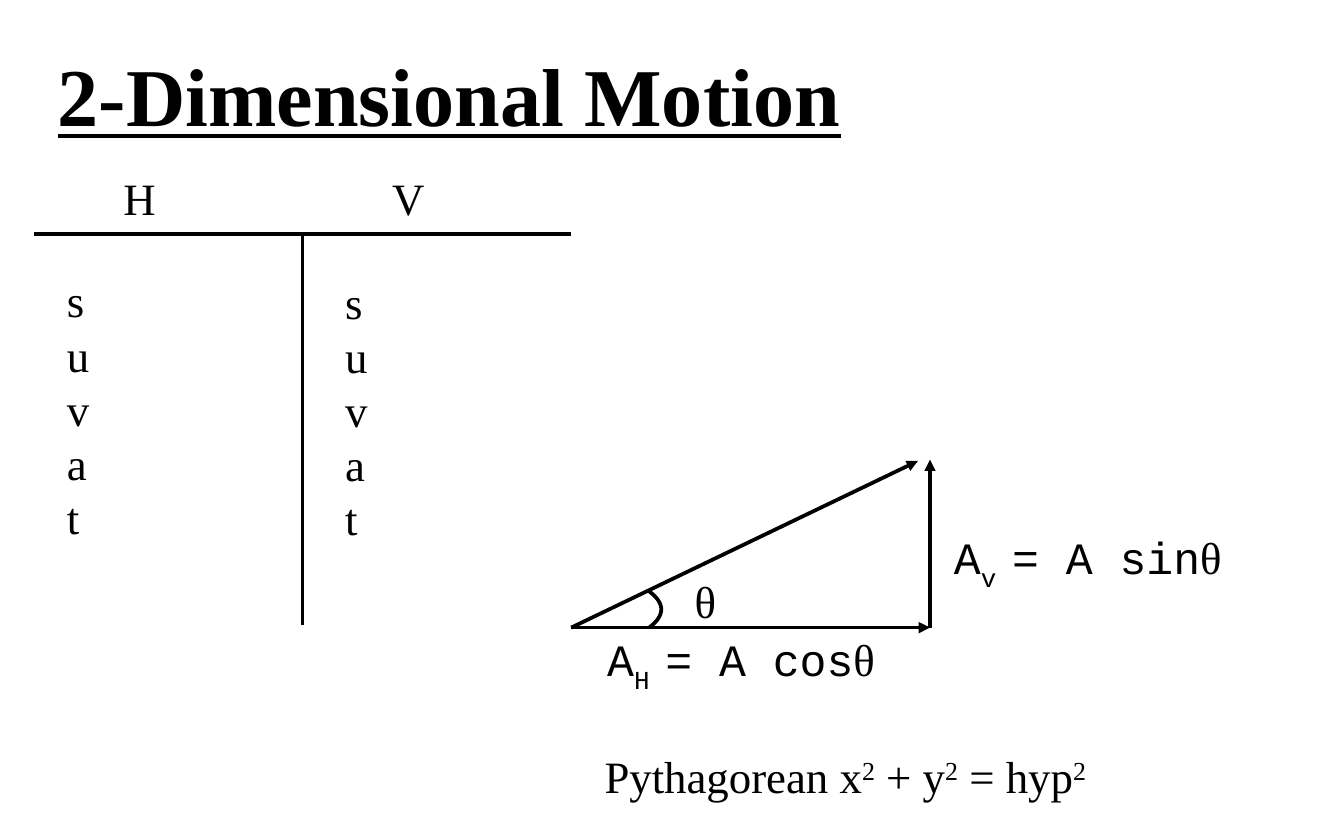
"""Build the 2-Dimensional Motion slide with its H/V table and vector triangle."""
from dataclasses import dataclass

from lxml import etree
from pptx import Presentation
from pptx import util as u
from pptx.dml.color import RGBColor
from pptx.enum import shapes, text
from pptx.oxml import ns

SCALE = 9144


@dataclass(frozen=True)
class Theme:
    ink: RGBColor = RGBColor(0, 0, 0)
    serif: str = "Times New Roman"
    mono: str = "Courier New"
    title_size: int = 44
    title_leading: int = 53
    body_size: int = 24
    body_leading: int = 29
    line_width: int = 2


THEME = Theme()
SERIF, MONO = THEME.serif, THEME.mono
SUB, SUP = -30000, 30000

TITLE = "2-Dimensional Motion"
TITLE_AREA = (33, 28, 908, 138)

COLUMNS = [("H", 82, 40, 198), ("V", 282, 247, 199)]
VARIABLES = ["s", "u", "v", "a", "t"]
TABLE_LINES = [((25, 174), (425, 174)), ((225, 174), (225, 465))]

ORIGIN, CORNER = (425, 467), (692, 467)
VECTORS = [(ORIGIN, (683, 343)), (ORIGIN, CORNER), (CORNER, (692, 342))]
ANGLE_CURVE = [(483, 440), (495, 449), (495, 458), (483, 467)]
CURVE_STEPS = 24

EQUATIONS = [
    ((507, 422, 38, 50), [("θ", SERIF, 0)]),
    ((442, 472, 226, 50),
     [("A", MONO, 0), ("H ", MONO, SUB), ("= A cos", MONO, 0), ("θ", SERIF, 0)]),
    ((700, 396, 226, 50),
     [("A", MONO, 0), ("v ", MONO, SUB), ("= A sin", MONO, 0), ("θ", SERIF, 0)]),
    ((440, 552, 386, 50),
     [("Pythagorean x", SERIF, 0), ("2", SERIF, SUP), (" + y", SERIF, 0),
      ("2", SERIF, SUP), (" = hyp", SERIF, 0), ("2", SERIF, SUP)]),
]


def emu(*lengths):
    return [u.Emu(round(length * SCALE)) for length in lengths]


def style_span(span, face, size, shift=0):
    span.font.name = face
    span.font.size = u.Pt(size)
    span.font.color.rgb = THEME.ink
    if shift:
        span.font._element.set("baseline", str(shift))


def add_title(page):
    box = page.shapes.title
    box.left, box.top, box.width, box.height = emu(*TITLE_AREA)
    frame = box.text_frame
    frame.text = TITLE
    frame.vertical_anchor = text.MSO_ANCHOR.TOP
    frame.auto_size = text.MSO_AUTO_SIZE.NONE
    para = frame.paragraphs[0]
    para.alignment = text.PP_ALIGN.LEFT
    para.line_spacing = u.Pt(THEME.title_leading)
    span = para.runs[0]
    style_span(span, THEME.serif, THEME.title_size)
    span.font.bold = span.font.underline = True


def add_text(page, area, lines):
    frame = page.shapes.add_textbox(*emu(*area)).text_frame
    frame.word_wrap = False
    frame.auto_size = text.MSO_AUTO_SIZE.SHAPE_TO_FIT_TEXT
    for index, spans in enumerate(lines):
        para = frame.add_paragraph() if index else frame.paragraphs[0]
        para.line_spacing = u.Pt(THEME.body_leading)
        for wording, face, shift in spans:
            span = para.add_run()
            span.text = wording
            style_span(span, face, THEME.body_size, shift)


def style_line(line):
    line.color.rgb = THEME.ink
    line.width = u.Pt(THEME.line_width)


def add_line(page, start, end, arrow=False):
    connector = page.shapes.add_connector(
        shapes.MSO_CONNECTOR.STRAIGHT, *emu(*start, *end))
    style_line(connector.line)
    if arrow:
        etree.SubElement(connector.line._get_or_add_ln(),
                         ns.qn("a:tailEnd"), type="triangle")
    etree.SubElement(connector._element.spPr, ns.qn("a:effectLst"))


def curve_point(step):
    t = step / CURVE_STEPS
    weights = ((1 - t) ** 3, 3 * t * (1 - t) ** 2, 3 * t * t * (1 - t), t ** 3)
    return emu(*(sum(w * p[axis] for w, p in zip(weights, ANGLE_CURVE))
                 for axis in (0, 1)))


def add_angle(page):
    points = [curve_point(step) for step in range(CURVE_STEPS + 1)]
    builder = page.shapes.build_freeform(*points[0])
    builder.add_line_segments(points[1:], close=False)
    angle = builder.convert_to_shape()
    angle.shadow.inherit = False
    angle.fill.background()
    style_line(angle.line)


def main():
    deck = Presentation()
    deck.slide_width, deck.slide_height = emu(1000, 625)
    page = deck.slides.add_slide(deck.slide_layouts[5])
    add_title(page)
    for start, end in TABLE_LINES:
        add_line(page, start, end)
    for heading, heading_left, list_left, list_top in COLUMNS:
        add_text(page, (heading_left, 122, 44, 50), [[(heading, SERIF, 0)]])
        add_text(page, (list_left, list_top, 37, 212),
                 [[(name, SERIF, 0)] for name in VARIABLES])
    for start, end in VECTORS:
        add_line(page, start, end, arrow=True)
    add_angle(page)
    for area, spans in EQUATIONS:
        add_text(page, area, [spans])
    deck.save("out.pptx")


if __name__ == "__main__":
    main()
